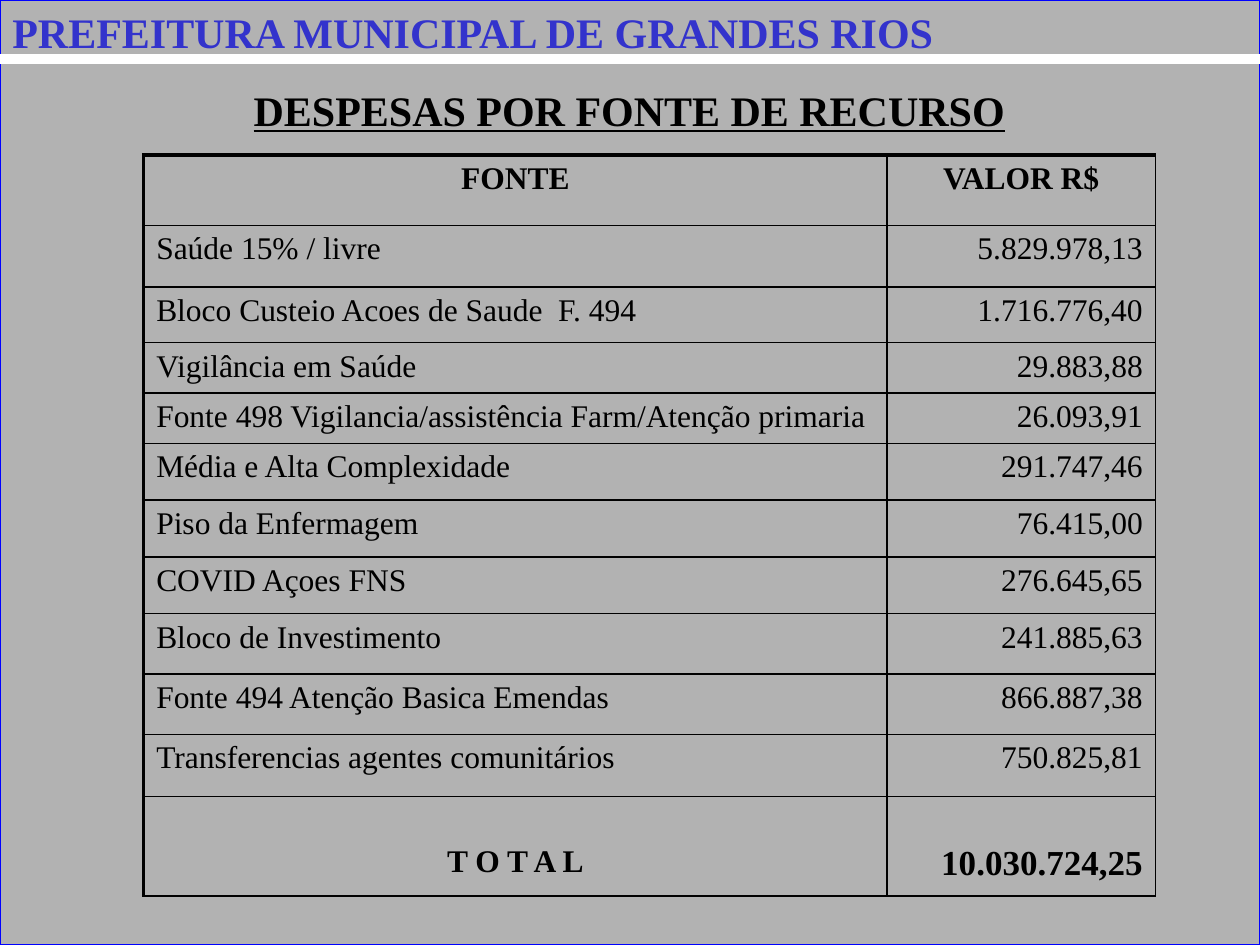
from dataclasses import dataclass

import pptx
import pptx.dml.color
import pptx.enum.shapes
import pptx.enum.text
import pptx.oxml
import pptx.oxml.ns
import pptx.util
from pptx.dml.color import RGBColor
from pptx.util import Inches

FONT = "Times New Roman"
BLACK = RGBColor(0x00, 0x00, 0x00)
WHITE = RGBColor(0xFF, 0xFF, 0xFF)
GRAY = RGBColor(0xB2, 0xB2, 0xB2)
FRAME_BLUE = RGBColor(0x00, 0x00, 0xFF)
TITLE_BLUE = RGBColor(0x33, 0x33, 0xCC)
SHADOW_GRAY = RGBColor(0x80, 0x80, 0x80)
ALIGN = pptx.enum.text.PP_ALIGN
NAMESPACE = pptx.oxml.ns.nsdecls("a")
THIN, THICK = 1, 2.25


@dataclass
class Row:
    source: str
    value: str
    height: float
    source_align: ALIGN = ALIGN.LEFT
    value_align: ALIGN = ALIGN.RIGHT
    bold: bool = False
    value_size: float = 18
    top_margin: float = 0.05


ROWS = [
    Row("FONTE", "VALOR R$", 0.56, ALIGN.CENTER, ALIGN.CENTER, bold=True),
    Row("Saúde 15% / livre", "5.829.978,13", 0.49),
    Row("Bloco Custeio Acoes de Saude  F. 494", "1.716.776,40", 0.44),
    Row("Vigilância em Saúde", "29.883,88", 0.4),
    Row("Fonte 498 Vigilancia/assistência Farm/Atenção primaria", "26.093,91", 0.4),
    Row("Média e Alta Complexidade", "291.747,46", 0.45),
    Row("Piso da Enfermagem", "76.415,00", 0.45),
    Row("COVID Açoes FNS", "276.645,65", 0.45),
    Row("Bloco de Investimento", "241.885,63", 0.48),
    Row("Fonte 494 Atenção Basica Emendas", "866.887,38", 0.48),
    Row("Transferencias agentes comunitários", "750.825,81", 0.49),
    Row("T O T A L", "10.030.724,25", 0.79, ALIGN.CENTER,
        bold=True, value_size=20, top_margin=0.38),
]
COLUMN_WIDTHS = (5.9, 2.13)


def write(frame, text: str, align: ALIGN, size: float, color=BLACK, **formats):
    """Put one formatted line in a text frame and return its run."""
    para = frame.paragraphs[0]
    para.alignment = align
    span = para.add_run()
    span.text = text
    span.font.color.rgb = color
    formats |= {"name": FONT, "size": pptx.util.Pt(size)}
    for name, value in formats.items():
        setattr(span.font, name, value)
    return span


def add_text_box(page, left: float, top: float, width: float, height: float):
    box = page.shapes.add_textbox(*map(Inches, (left, top, width, height)))
    box.text_frame.word_wrap = True
    return box.text_frame


def set_borders(cell, left: float, top: float) -> None:
    widths = {"lnL": left, "lnR": THIN, "lnT": top, "lnB": THIN}
    properties = cell._tc.get_or_add_tcPr()
    for place, (tag, width) in enumerate(widths.items()):
        border = pptx.oxml.parse_xml(
            f'<a:{tag} {NAMESPACE} w="{pptx.util.Pt(width)}"><a:solidFill>'
            f'<a:srgbClr val="{BLACK}"/></a:solidFill></a:{tag}>')
        properties.insert(place, border)


def add_background(page, deck) -> None:
    panel = page.shapes.add_shape(pptx.enum.shapes.MSO_SHAPE.RECTANGLE, 0, 0,
                                  deck.slide_width, deck.slide_height)
    panel.shadow.inherit = False
    panel.fill.solid()
    panel.fill.fore_color.rgb = GRAY
    panel.line.color.rgb = FRAME_BLUE
    panel.line.width = pptx.util.Pt(0.75)

    rule = page.shapes.add_connector(pptx.enum.shapes.MSO_CONNECTOR.STRAIGHT,
                                     0, Inches(0.47), deck.slide_width, Inches(0.47))
    rule.line.color.rgb = WHITE
    rule.line.width = pptx.util.Pt(6)
    rule._element.spPr.append(pptx.oxml.parse_xml(f"<a:effectLst {NAMESPACE}/>"))


def add_headings(page) -> None:
    heading = add_text_box(page, 0.62, 0.42, 8.75, 4.91)
    write(heading, "DESPESAS POR FONTE DE RECURSO", ALIGN.CENTER, 24,
          bold=True, underline=True)
    heading.paragraphs[0].line_spacing = 1.5

    banner = add_text_box(page, 0, 0, 8.23, 0.5)
    span = write(banner, "PREFEITURA MUNICIPAL DE GRANDES RIOS", ALIGN.LEFT, 24,
                 TITLE_BLUE, bold=True)
    shadow = pptx.oxml.parse_xml(
        f'<a:effectLst {NAMESPACE}><a:outerShdw dist="35921" dir="2700000">'
        f'<a:srgbClr val="{SHADOW_GRAY}"/></a:outerShdw></a:effectLst>')
    span.font._element.find(pptx.oxml.ns.qn("a:solidFill")).addnext(shadow)


def add_expense_table(page) -> None:
    height = sum(row.height for row in ROWS)
    table = page.shapes.add_table(
        len(ROWS), len(COLUMN_WIDTHS), Inches(1.14), Inches(1.23),
        Inches(sum(COLUMN_WIDTHS)), Inches(height)).table
    table.first_row = table.horz_banding = False
    for column, width in zip(table.columns, COLUMN_WIDTHS):
        column.width = Inches(width)
    for index, row in enumerate(ROWS):
        table.rows[index].height = Inches(row.height)
        entries = ((row.source, row.source_align, 18),
                   (row.value, row.value_align, row.value_size))
        for position, (text, align, size) in enumerate(entries):
            cell = table.cell(index, position)
            cell.fill.background()
            cell.margin_top = Inches(row.top_margin)
            write(cell.text_frame, text, align, size, bold=row.bold)
            set_borders(cell, left=THIN if position else THICK,
                        top=THIN if index else THICK)


def main() -> None:
    deck = pptx.Presentation()
    deck.slide_width, deck.slide_height = Inches(10), Inches(7.5)
    page = deck.slides.add_slide(deck.slide_layouts[6])
    add_background(page, deck)
    add_headings(page)
    add_expense_table(page)
    deck.save("out.pptx")


if __name__ == "__main__":
    main()
